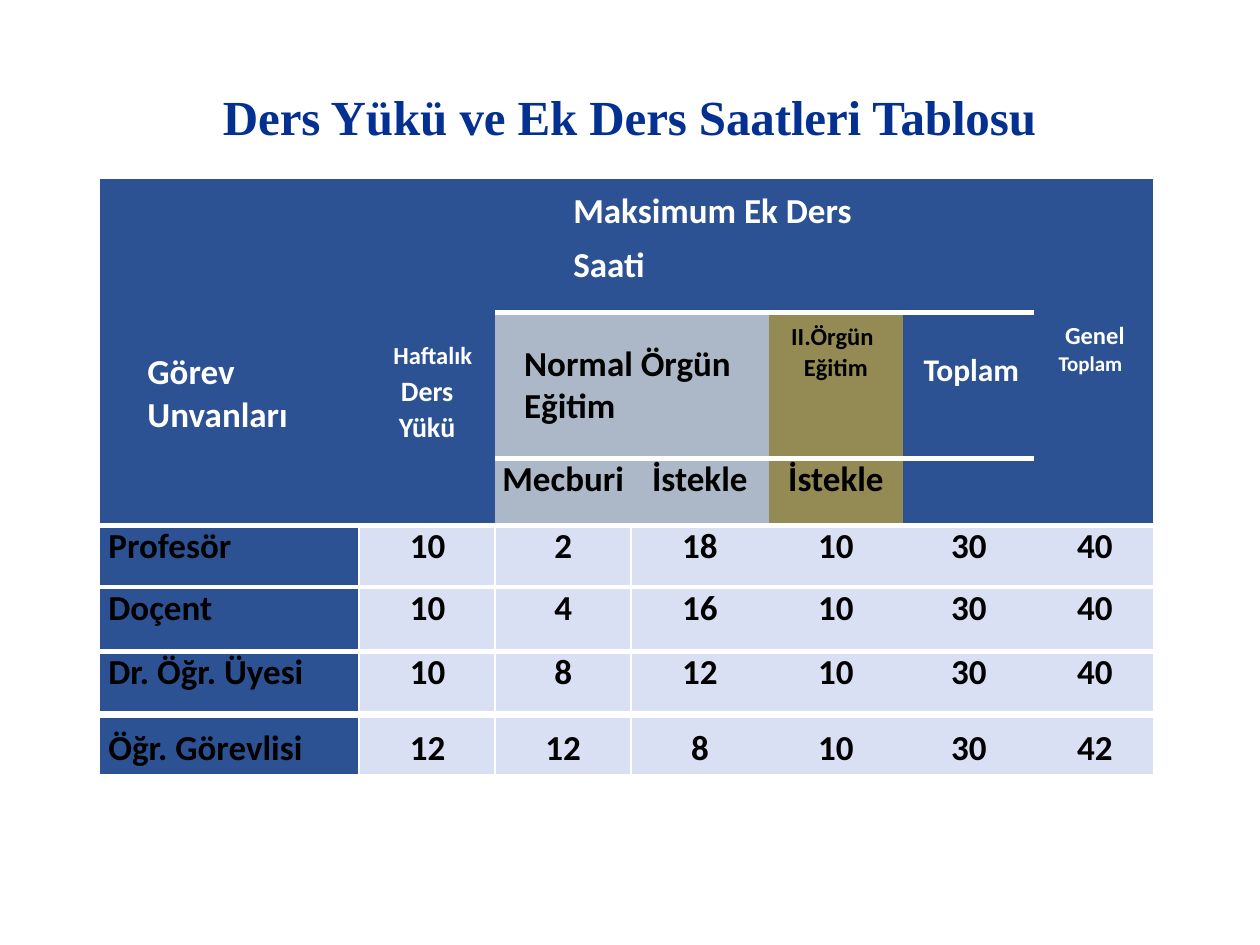
from dataclasses import dataclass
from typing import Any

from lxml.etree import SubElement as Sub
from pptx import Presentation
from pptx.dml.color import RGBColor as Rgb
from pptx.enum.text import MSO_ANCHOR as Anchor, MSO_AUTO_SIZE as Auto, PP_ALIGN as Align
from pptx.oxml.ns import qn
from pptx.util import Inches, Pt


@dataclass(frozen=True)
class Theme:
    navy: str = "2D5294"
    grey: str = "ACB8C8"
    olive: str = "948A54"
    pale: str = "D9E0F3"
    white: str = "FFFFFF"
    black: str = "000000"
    title: str = "043092"
    serif: str = "Times New Roman"
    sans: str = "Calibri"
    head: int = 28
    body: int = 20
    mid: int = 18
    sub: int = 16
    small: int = 14
    tiny: int = 12
    thin: float = 1.5
    rule: float = 3
    thick: float = 4.25


T = Theme()
NO_GRID = "{2D5ABB26-0587-4C30-8999-92F81FD0307C}"
MID, LEFT = Align.CENTER, Align.LEFT
COLS = (2.06, 1.08, 1.08, 1.09, 1.07, 1.04, 0.94)
ROWS = (1.06, 1.16, 0.53, 0.49, 0.51, 0.5, 0.47)
DATA = (
    ("Profesör", 10, 2, 18, 10, 30, 40),
    ("Doçent", 10, 4, 16, 10, 30, 40),
    ("Dr. Öğr. Üyesi", 10, 8, 12, 10, 30, 40),
    ("Öğr. Görevlisi", 12, 12, 8, 10, 30, 42),
)


@dataclass
class Item:
    """One table cell: runs are (text, size); edges map L, R, T, B to points."""
    row: int
    col: int
    runs: tuple = ()
    fill: str = T.navy
    ink: str = T.white
    align: Any = MID
    left: float = 0
    first: float = 0
    right: float = 0
    top: float = 0
    gap: Any = None
    edges: str | dict = ""
    span: int = 1


def put(obj: Any, **vals: Any) -> None:
    for name, val in vals.items():
        setattr(obj, name, val)


def style(font: Any, size: float, ink: str, face: str = T.sans) -> None:
    put(font, name=face, size=Pt(size), bold=True)
    font.color.rgb = Rgb.from_string(ink)


def indent(para: Any, left: float, first: float = 0, right: float = 0) -> None:
    props = para._p.get_or_add_pPr()
    for key, val in (("marL", left), ("indent", first), ("marR", right)):
        props.set(key, str(Inches(val)))


def edge(cell: Any, lines: dict) -> None:
    """Add white border lines; they must come before the cell's fill."""
    props = cell._tc.get_or_add_tcPr()
    for side in "LRTB":
        if side in lines:
            line = Sub(props, qn(f"a:ln{side}"), w=str(Pt(lines[side])))
            fill = Sub(line, qn("a:solidFill"))
            Sub(fill, qn("a:srgbClr"), val=T.white)


def draw(table: Any, item: Item) -> None:
    cell = table.cell(item.row, item.col)
    if item.span > 1:
        cell.merge(table.cell(item.row, item.col + item.span - 1))
    lines = item.edges
    if isinstance(lines, str):
        lines = dict.fromkeys(lines, T.rule)
    edge(cell, lines)
    put(cell, margin_left=0, margin_right=0, margin_bottom=0,
        margin_top=Inches(item.top), vertical_anchor=Anchor.TOP)
    cell.fill.solid()
    cell.fill.fore_color.rgb = Rgb.from_string(item.fill)
    para = cell.text_frame.paragraphs[0]
    put(para, alignment=item.align, line_spacing=item.gap)
    indent(para, item.left, item.first, item.right)
    for text, size in item.runs:
        run = para.add_run()
        run.text = text
        style(run.font, size, item.ink)


def heads() -> list[Item]:
    big, low = T.body, T.small
    return [
        Item(0, 0), Item(0, 1),
        Item(0, 2, (("Maksimum Ek Ders Saati", big),), align=LEFT, left=0.62,
             gap=Pt(30.8), edges="B", span=3),
        Item(0, 5, edges="B"), Item(0, 6),
        Item(1, 0, (("Görev Unvanları", big),), align=LEFT, left=0.38, top=0.31),
        Item(1, 1, (("Haftalık", low), (" ", big), ("Ders Yükü", T.sub)),
             left=0.14, first=0.09, right=0.14, top=0.14, gap=1.03),
        Item(1, 2, (("Normal Örgün Eğitim", big),), T.grey, T.black, LEFT,
             left=0.23, top=0.24, edges="TB", span=2),
        Item(1, 4, (("II.Örgün Eğitim", low),), T.olive, T.black, LEFT,
             left=0.28, first=-0.1, top=0.07, gap=1.03, edges="TB"),
        Item(1, 5, (("Toplam", T.mid),), left=0.04, top=0.31, edges="TB"),
        Item(1, 6, (("Genel ", low), ("Toplam", T.tiny)),
             left=0.16, first=0.07, right=0.21, top=0.06, gap=1.03),
        Item(2, 0, edges="B"), Item(2, 1, edges="B"),
        Item(2, 2, (("Mecburi", big),), T.grey, T.black, edges="TB"),
        Item(2, 3, (("İstekle", big),), T.grey, T.black, edges="TB"),
        Item(2, 4, (("İstekle", big),), T.olive, T.black, edges="TB"),
        Item(2, 5, edges="TB"), Item(2, 6, edges="B"),
    ]


def body() -> list[Item]:
    items = []
    last = len(DATA) - 1
    sides = {0: "R", 1: "LR", 2: "L"}
    insets = {0: 0.07, 1: 0.01, 6: 0.34}
    for i, vals in enumerate(DATA):
        for col, val in enumerate(vals):
            lines = dict.fromkeys(sides.get(col, ""), T.thin)
            lines["T"] = T.thick if i == last else T.rule
            if i < last:
                lines["B"] = T.thick if i == last - 1 else T.rule
            items.append(Item(
                i + 3, col, ((str(val), T.body),),
                T.pale if col else T.navy, T.black,
                LEFT if col in (0, 6) else MID, insets.get(col, 0),
                gap=Pt(31.8) if i == last else None, edges=lines))
    return items


def add_title(slide: Any) -> None:
    title = slide.shapes.title
    put(title, left=Inches(1.76), top=Inches(0.67),
        width=Inches(6.57), height=Inches(0.5))
    frame = title.text_frame
    put(frame, text="Ders Yükü ve Ek Ders Saatleri Tablosu", word_wrap=True,
        auto_size=Auto.SHAPE_TO_FIT_TEXT, vertical_anchor=Anchor.TOP,
        margin_left=0, margin_right=0, margin_bottom=0, margin_top=Inches(0.02))
    para = frame.paragraphs[0]
    para.alignment = LEFT
    indent(para, 0.01)
    font = para.runs[0].font
    style(font, T.head, T.title, T.serif)
    para.runs[0]._r.get_or_add_rPr().set("spc", "-5")


def add_grid(slide: Any) -> None:
    table = slide.shapes.add_table(
        len(ROWS), len(COLS), Inches(0.79), Inches(1.42),
        Inches(sum(COLS)), Inches(sum(ROWS))).table
    put(table, first_row=False, horz_banding=False)
    table._tbl.tblPr.find(qn("a:tableStyleId")).text = NO_GRID
    for col, width in zip(table.columns, COLS):
        col.width = Inches(width)
    for row, height in zip(table.rows, ROWS):
        row.height = Inches(height)
    for item in heads() + body():
        draw(table, item)


def main() -> None:
    deck = Presentation()
    put(deck, slide_width=Inches(10), slide_height=Inches(7.5))
    slide = deck.slides.add_slide(deck.slide_layouts[5])
    add_title(slide)
    add_grid(slide)
    deck.save("out.pptx")


if __name__ == "__main__":
    main()
